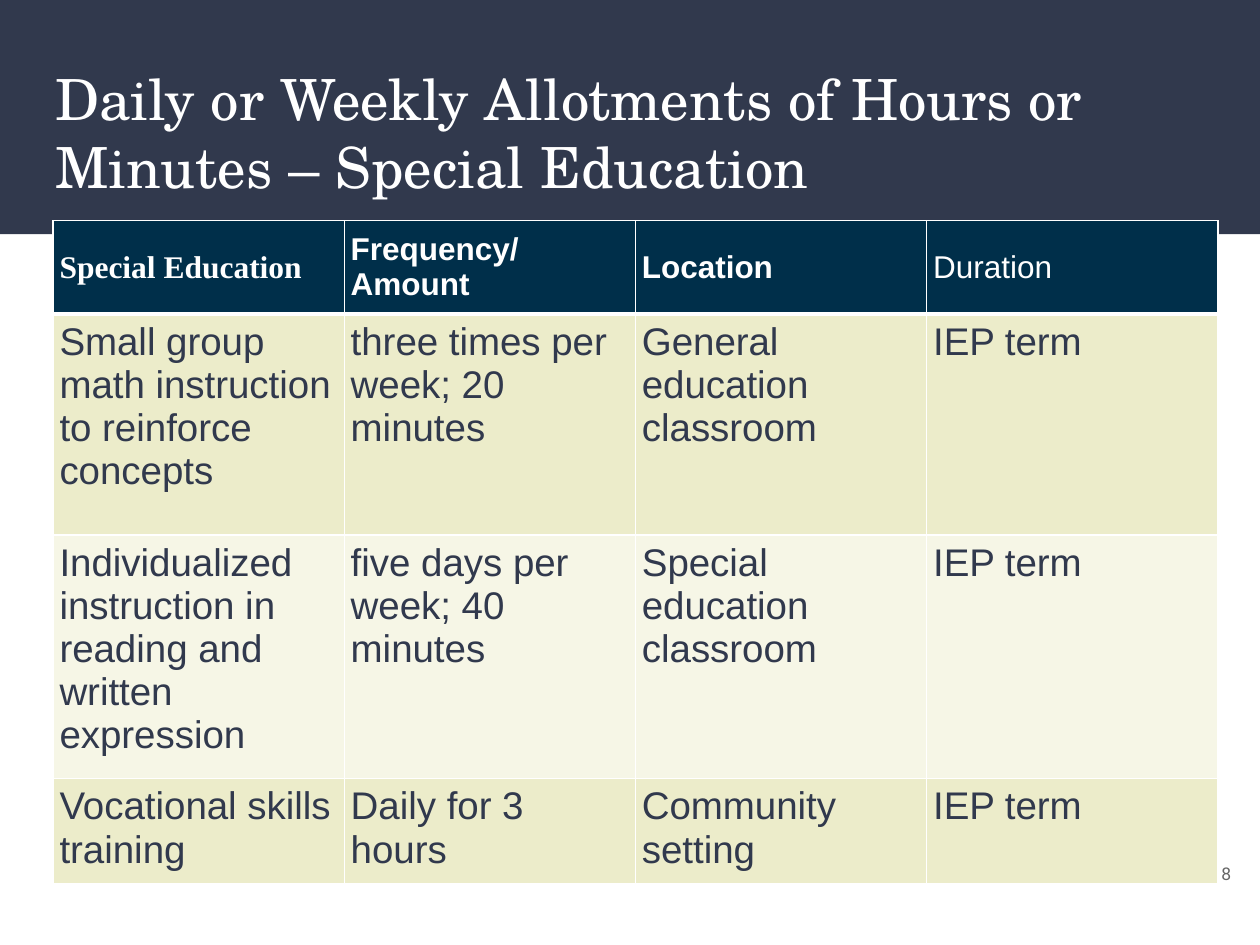
from lxml import etree
from pptx import Presentation
from pptx.dml.color import RGBColor
from pptx.enum.shapes import MSO_SHAPE
from pptx.enum.text import MSO_ANCHOR, PP_ALIGN
from pptx.oxml.ns import qn
from pptx.util import Cm, Pt

RECTANGLE = MSO_SHAPE.RECTANGLE
TOP, MIDDLE, BOTTOM = MSO_ANCHOR.TOP, MSO_ANCHOR.MIDDLE, MSO_ANCHOR.BOTTOM
LEFT, RIGHT = PP_ALIGN.LEFT, PP_ALIGN.RIGHT

COLORS = {
    "white": "FFFFFF",
    "slate": "31394D",
    "navy": "002F4A",
    "band_dark": "ECECCA",
    "band_light": "F6F6E6",
    "gray": "666666",
}
HEADERS = ["Special Education", "Frequency/\nAmount", "Location", "Duration"]
SERVICES = [
    ["Small group math instruction to reinforce concepts",
     "three times per week; 20 minutes", "General education classroom", "IEP term"],
    ["Individualized instruction in reading and written expression",
     "five days per week; 40 minutes", "Special education classroom", "IEP term"],
    ["Vocational skills training", "Daily for 3 hours", "Community setting", "IEP term"],
]
ROW_HEIGHTS = [1.88, 4.45, 4.72, 2.06]
COLUMN_WIDTH = 5.87


class SlideBuilder:
    """Holds the shared style and the slide being built."""

    def __init__(self, slide):
        self.slide = slide

    def color(self, name):
        return RGBColor.from_string(COLORS[name])

    def style(self, frame, size, font, color, bold=False, align=LEFT):
        for para in frame.paragraphs:
            para.alignment = align
            for span in para.runs:
                span.font.size = Pt(size)
                span.font.name = font
                span.font.bold = bold
                span.font.color.rgb = self.color(color)

    def band(self, left, top, width, height, fill):
        shape = self.slide.shapes.add_shape(
            RECTANGLE, Cm(left), Cm(top), Cm(width), Cm(height))
        shape.shadow.inherit = False
        shape.fill.solid()
        shape.fill.fore_color.rgb = self.color(fill)
        shape.line.fill.background()

    def text(self, left, top, width, height, text, size, font, color,
             anchor=TOP, align=LEFT):
        box = self.slide.shapes.add_textbox(Cm(left), Cm(top), Cm(width), Cm(height))
        frame = box.text_frame
        frame.word_wrap = True
        frame.vertical_anchor = anchor
        frame.text = text
        self.style(frame, size, font, color, align=align)

    def borders(self, cell, bottom):
        properties = cell._tc.get_or_add_tcPr()
        widths = {"a:lnL": 1, "a:lnR": 1, "a:lnT": 1, "a:lnB": bottom}
        for position, (tag, width) in enumerate(widths.items()):
            line = etree.Element(qn(tag), w=str(Pt(width)))
            fill = etree.SubElement(line, qn("a:solidFill"))
            etree.SubElement(fill, qn("a:srgbClr"), val=COLORS["white"])
            properties.insert(position, line)

    def cell(self, cell, text, fill, size, font, color, bold, anchor, bottom):
        cell.text = text
        cell.fill.solid()
        cell.fill.fore_color.rgb = self.color(fill)
        cell.vertical_anchor = anchor
        cell.margin_left = cell.margin_right = Cm(0.13)
        cell.margin_top = cell.margin_bottom = Cm(0.13)
        self.style(cell.text_frame, size, font, color, bold)
        self.borders(cell, bottom)

    def table(self, left, top, headers, records):
        table = self.slide.shapes.add_table(
            len(records) + 1, len(headers), Cm(left), Cm(top),
            Cm(COLUMN_WIDTH * len(headers)), Cm(sum(ROW_HEIGHTS))).table
        for column in table.columns:
            column.width = Cm(COLUMN_WIDTH)
        for row, height in zip(table.rows, ROW_HEIGHTS):
            row.height = Cm(height)
        for index, header in enumerate(headers):
            font = "Arial" if index else "Times New Roman"
            self.cell(table.cell(0, index), header, "navy", 18, font, "white",
                      header != "Duration", MIDDLE, 3)
        for number, record in enumerate(records, 1):
            fill = "band_dark" if number % 2 else "band_light"
            for index, text in enumerate(record):
                self.cell(table.cell(number, index), text, fill, 22, "Arial",
                          "slate", False, TOP, 1)


def main():
    deck = Presentation()
    deck.slide_width, deck.slide_height = Cm(25.4), Cm(19.05)
    page = SlideBuilder(deck.slides.add_slide(deck.slide_layouts[6]))
    page.band(0, 0, 25.4, 4.72, "slate")
    page.text(0.86, 1.85, 23.67, 2.31,
              "Daily or Weekly Allotments of Hours or Minutes – Special Education",
              32.4, "TeX Gyre Schola", "white", anchor=BOTTOM)
    page.table(1.07, 4.45, HEADERS, SERVICES)
    page.text(23.55, 17.27, 1.52, 1.45, "8", 10, "Roboto", "gray", align=RIGHT)
    deck.save("out.pptx")


if __name__ == "__main__":
    main()
